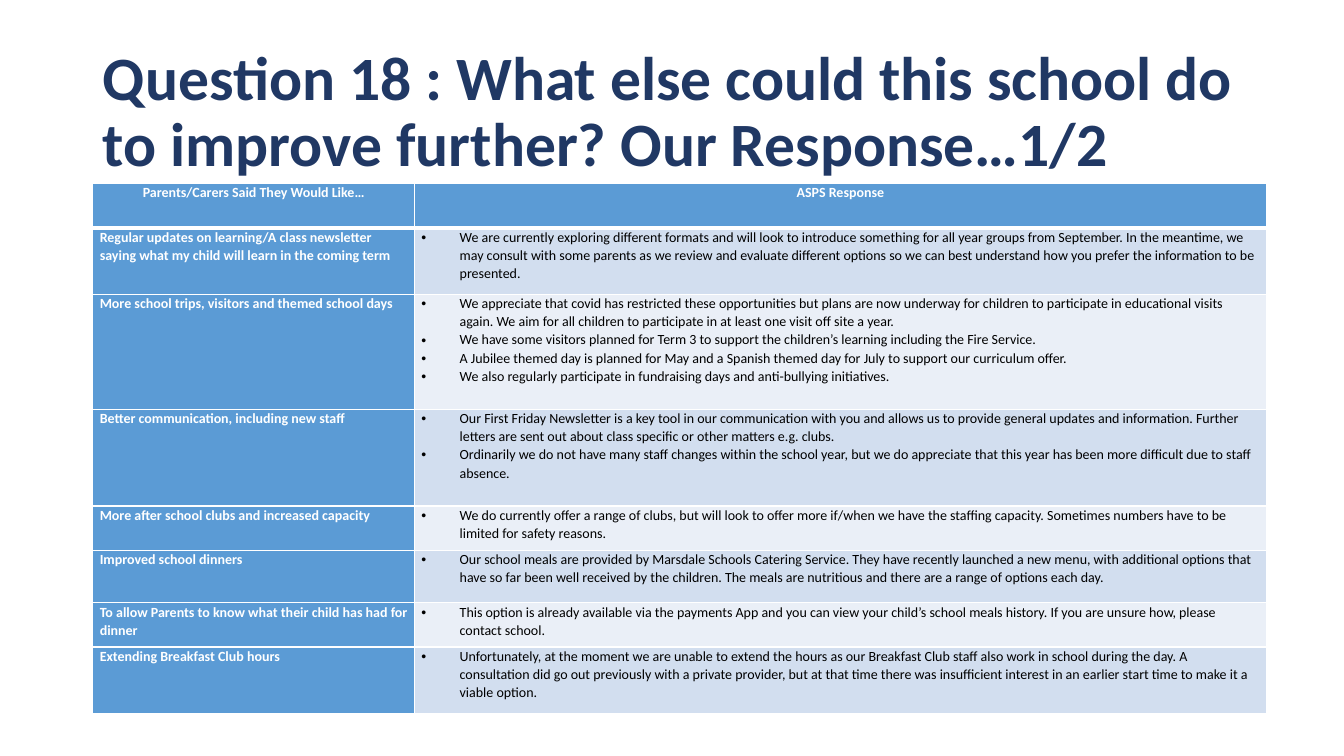
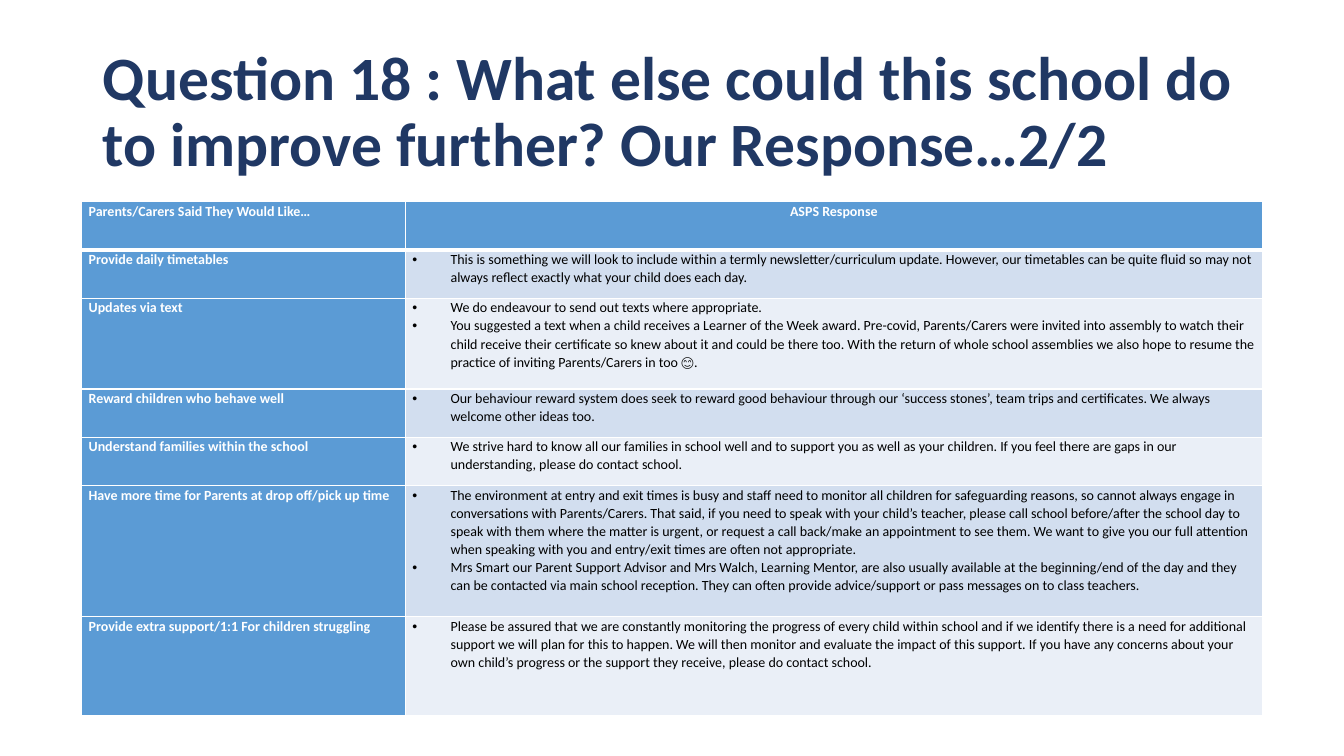
from lxml.etree import SubElement
from pptx import Presentation
from pptx.dml.color import RGBColor
from pptx.enum.text import MSO_ANCHOR, MSO_AUTO_SIZE, PP_ALIGN
from pptx.oxml import parse_xml
from pptx.oxml.ns import nsdecls, qn
from pptx.util import Inches, Pt

# Shared look
COLOURS = {
    "title": "203864",
    "head": "5B9BD5",
    "odd": "D2DEEF",
    "even": "EAEFF7",
    "light": "FFFFFF",
    "dark": "000000",
}
TITLE_FONT = {"name": "Calibri", "size": Pt(44), "bold": True}
LABEL_FONT = {"name": "Calibri", "size": Pt(10), "bold": True}
ANSWER_FONT = {**LABEL_FONT, "bold": False}
CELL_MARGINS = {
    "margin_left": Inches(0.07), "margin_right": Inches(0.07),
    "margin_top": 0, "margin_bottom": 0,
}
TITLE_BOX = {
    "left": Inches(0.92), "top": Inches(0.4),
    "width": Inches(11.5), "height": Inches(1.45),
}
BULLET_INDENT = Inches(0.38)
THIN, THICK = Pt(1), Pt(3)

# Content
TITLE = "Question 18 : What else could this school do to improve further? Our Response…"
HEADINGS = ("Parents/Carers Said They Would Like…", "ASPS Response")

# Each row: height, request, answers
FIRST_ROWS = [
    (0.66, "Regular updates on learning/A class newsletter saying what my child will learn in the coming term", [
        "We are currently exploring different formats and will look to introduce something for all year groups "
        "from September. In the meantime, we may consult with some parents as we review and evaluate different "
        "options so we can best understand how you prefer the information to be presented.",
    ]),
    (1.14, "More school trips, visitors and themed school days", [
        "We appreciate that covid has restricted these opportunities but plans are now underway for children to "
        "participate in educational visits again. We aim for all children to participate in at least one visit "
        "off site a year.",
        "We have some visitors planned for Term 3 to support the children’s learning including the Fire Service.",
        "A Jubilee themed day is planned for May and a Spanish themed day for July to support our curriculum offer.",
        "We also regularly participate in fundraising days and anti-bullying initiatives.",
    ]),
    (0.96, "Better communication, including new staff", [
        "Our First Friday Newsletter is a key tool in our communication with you and allows us to provide general "
        "updates and information. Further letters are sent out about class specific or other matters e.g. clubs.",
        "Ordinarily we do not have many staff changes within the school year, but we do appreciate that this year "
        "has been more difficult due to staff absence.",
    ]),
    (0.44, "More after school clubs and increased capacity", [
        "We do currently offer a range of clubs, but will look to offer more if/when we have the staffing "
        "capacity. Sometimes numbers have to be limited for safety reasons.",
    ]),
    (0.52, "Improved school dinners", [
        "Our school meals are provided by Marsdale Schools Catering Service. They have recently launched a new "
        "menu, with additional options that have so far been well received by the children. The meals are "
        "nutritious and there are a range of options each day.",
    ]),
    (0.44, "To allow Parents to know what their child has had for dinner", [
        "This option is already available via the payments App and you can view your child’s school meals "
        "history. If you are unsure how, please contact school.",
    ]),
    (0.66, "Extending Breakfast Club hours", [
        "Unfortunately, at the moment we are unable to extend the hours as our Breakfast Club staff also work in "
        "school during the day. A consultation did go out previously with a private provider, but at that time "
        "there was insufficient interest in an earlier start time to make it a viable option.",
    ]),
]
SECOND_ROWS = [
    (0.48, "Provide daily timetables", [
        "This is something we will look to include within a termly newsletter/curriculum update. However, our "
        "timetables can be quite fluid so may not always reflect exactly what your child does each day.",
    ]),
    (0.9, "Updates via text", [
        "We do endeavour to send out texts where appropriate.",
        "You suggested a text when a child receives a Learner of the Week award. Pre-covid, Parents/Carers were "
        "invited into assembly to watch their child receive their certificate so knew about it and could be there "
        "too. With the return of whole school assemblies we also hope to resume the practice of inviting "
        "Parents/Carers in too 😊.",
    ]),
    (0.48, "Reward children who behave well", [
        "Our behaviour reward system does seek to reward good behaviour through our ‘success stones’, team trips "
        "and certificates. We always welcome other ideas too.",
    ]),
    (0.48, "Understand families within the school", [
        "We strive hard to know all our families in school well and to support you as well as your children. If "
        "you feel there are gaps in our understanding, please do contact school.",
    ]),
    (1.3, "Have more time for Parents at drop off/pick up time", [
        "The environment at entry and exit times is busy and staff need to monitor all children for safeguarding "
        "reasons, so cannot always engage in conversations with Parents/Carers. That said, if you need to speak "
        "with your child’s teacher, please call school before/after the school day to speak with them where the "
        "matter is urgent, or request a call back/make an appointment to see them. We want to give you our full "
        "attention when speaking with you and entry/exit times are often not appropriate.",
        "Mrs Smart our Parent Support Advisor and Mrs Walch, Learning Mentor, are also usually available at the "
        "beginning/end of the day and they can be contacted via main school reception. They can often provide "
        "advice/support or pass messages on to class teachers.",
    ]),
    (0.98, "Provide extra support/1:1 For children struggling", [
        "Please be assured that we are constantly monitoring the progress of every child within school and if we "
        "identify there is a need for additional support we will plan for this to happen. We will then monitor "
        "and evaluate the impact of this support. If you have any concerns about your own child’s progress or "
        "the support they receive, please do contact school.",
    ]),
]
PAGES = [
    {"part": "1/2", "corner": (0.92, 1.82), "columns": (3.19, 8.45), "head_height": 0.44,
     "head_align": (PP_ALIGN.CENTER, PP_ALIGN.CENTER), "rows": FIRST_ROWS},
    {"part": "2/2", "corner": (0.81, 2), "columns": (3.21, 8.5), "head_height": 0.48,
     "head_align": (PP_ALIGN.LEFT, PP_ALIGN.CENTER), "rows": SECOND_ROWS},
]


# Helpers
def set_all(target, values):
    for name, value in values.items():
        setattr(target, name, value)


def set_font(font, values, colour):
    set_all(font, values)
    font.color.rgb = RGBColor.from_string(COLOURS[colour])


def add_bullet(para):
    properties = para._p.get_or_add_pPr()
    properties.set("marL", str(BULLET_INDENT))
    properties.set("indent", str(-BULLET_INDENT))
    SubElement(properties, qn("a:buFont"), typeface="Arial")
    SubElement(properties, qn("a:buChar"), char="•")


def add_borders(cell, top, bottom):
    properties = cell._tc.get_or_add_tcPr()
    widths = {"lnL": THIN, "lnR": THIN, "lnT": top, "lnB": bottom}
    for place, (side, width) in enumerate(widths.items()):
        properties.insert(place, parse_xml(
            f'<a:{side} {nsdecls("a")} w="{width}"><a:solidFill>'
            f'<a:srgbClr val="{COLOURS["light"]}"/></a:solidFill></a:{side}>'))


def fill_cell(cell, texts, fill, font, colour, align=PP_ALIGN.LEFT, bullets=False):
    set_all(cell, CELL_MARGINS)
    cell.fill.solid()
    cell.fill.fore_color.rgb = RGBColor.from_string(COLOURS[fill])
    frame = cell.text_frame
    for number, text in enumerate(texts):
        para = frame.add_paragraph() if number else frame.paragraphs[0]
        if bullets:
            add_bullet(para)
        para.alignment = align
        para.line_spacing = 1.07
        span = para.add_run()
        span.text = text
        set_font(span.font, font, colour)


def add_title(page, part):
    title = page.shapes.title
    set_all(title, TITLE_BOX)
    frame = title.text_frame
    frame.auto_size = MSO_AUTO_SIZE.NONE
    frame.vertical_anchor = MSO_ANCHOR.MIDDLE
    para = frame.paragraphs[0]
    para.alignment = PP_ALIGN.LEFT
    para.line_spacing = 0.9
    span = para.add_run()
    span.text = TITLE + part
    set_font(span.font, TITLE_FONT, "title")


def add_responses(page, content):
    rows, columns = content["rows"], content["columns"]
    heights = [content["head_height"]] + [row[0] for row in rows]
    left, top = content["corner"]
    table = page.shapes.add_table(
        len(heights), len(columns), Inches(left), Inches(top),
        Inches(sum(columns)), Inches(sum(heights))).table
    for column, width in zip(table.columns, columns):
        column.width = Inches(width)
    for row, height in zip(table.rows, heights):
        row.height = Inches(height)

    for column, heading in enumerate(HEADINGS):
        fill_cell(table.cell(0, column), [heading], "head", LABEL_FONT, "light",
                  content["head_align"][column])
    for number, (_, request, answers) in enumerate(rows, 1):
        band = "odd" if number % 2 else "even"
        fill_cell(table.cell(number, 0), [request], "head", LABEL_FONT, "light")
        fill_cell(table.cell(number, 1), answers, band, ANSWER_FONT, "dark", bullets=True)

    # A thicker rule parts the heading from the rows
    for number, row in enumerate(table.rows):
        for cell in row.cells:
            add_borders(cell, THICK if number == 1 else THIN, THICK if number == 0 else THIN)


def main():
    deck = Presentation()
    deck.slide_width, deck.slide_height = Inches(13.33), Inches(7.5)
    title_only = deck.slide_layouts[5]
    for content in PAGES:
        page = deck.slides.add_slide(title_only)
        add_title(page, content["part"])
        add_responses(page, content)
    deck.save("out.pptx")


if __name__ == "__main__":
    main()
